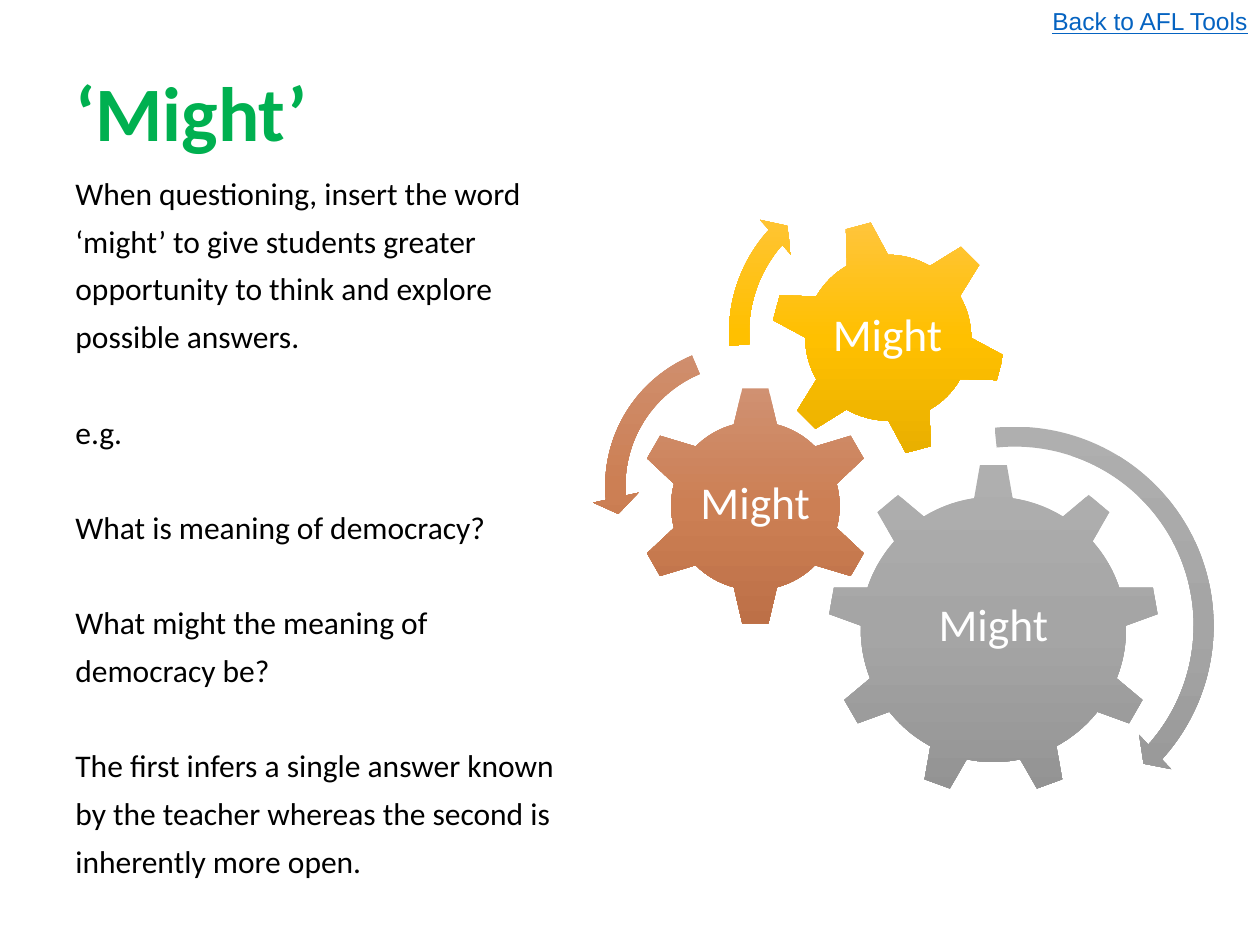
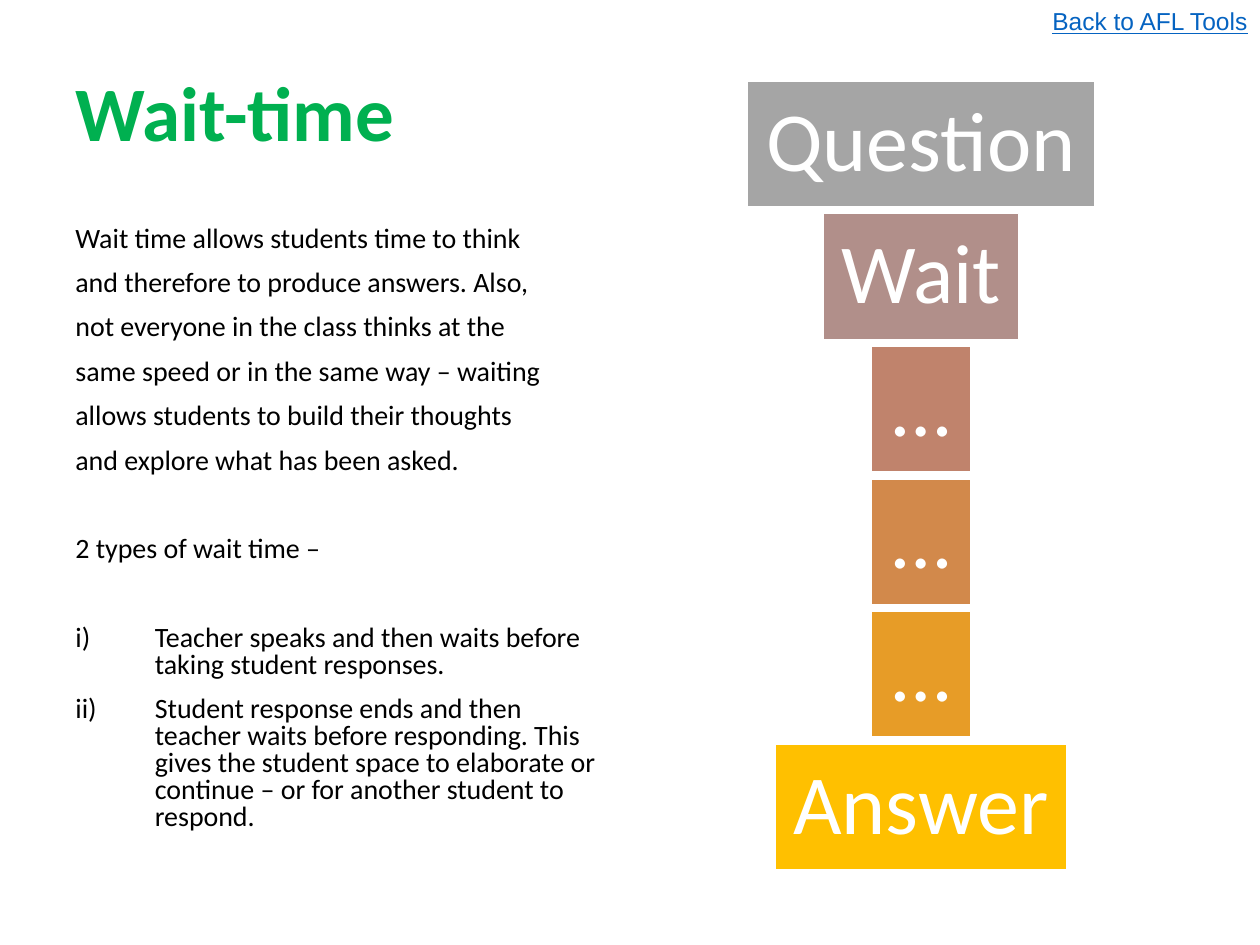
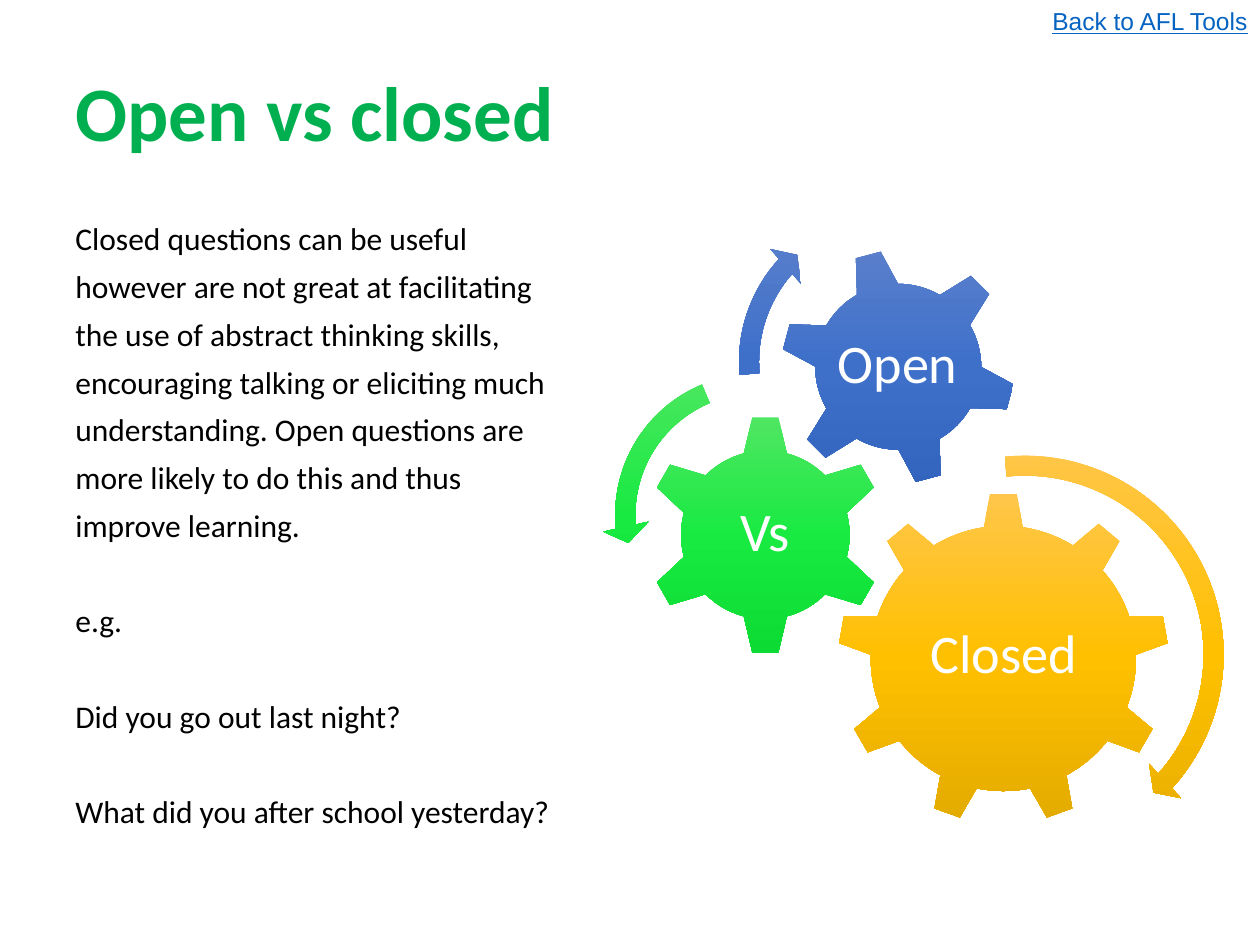
from copy import deepcopy

from lxml import etree
from pptx import Presentation
from pptx.dml.color import RGBColor
from pptx.enum import shapes, text
from pptx.oxml.ns import qn
from pptx.util import Pt

COLORS = {"title": "00B050", "body": "000000", "link": "0563C1", "white": "FFFFFF"}
GRADIENTS = {
    "grey": ["AFAFAF", "A5A5A5", "939393"],
    "copper": ["D09172", "CC7F54", "BD7047"],
    "gold": ["FFC64B", "FFC000", "E3AB00"],
    "green": ["51E663", "19EA42", "0CDB34"],
    "blue": ["6183CB", "3E70CA", "3062BB"],
}
SHAPE = shapes.MSO_SHAPE
ALIGN = text.PP_ALIGN

# Each gear: preset, left, top, size, rotation, then its label box
GEARS = [
    (SHAPE.GEAR_9, 473, 265, 189.4, 0, (511.2, 309.6, 113, 97.2)),
    (SHAPE.GEAR_6, 362.9, 220.3, 137.5, 0, (397.4, 254.9, 68.4, 67.7)),
    (SHAPE.GEAR_6, 439.9, 125.3, 135.4, 345, (469.4, 154.8, 75.6, 75.6)),
]
# Each arrow: preset, left, top, size, adjustments
ARROWS = [
    (SHAPE.CIRCULAR_ARROW, 458.6, 236.2, 242.6, (0.047, 2.99, 25.204, 158.521, 0.055)),
    (SHAPE.LEFT_CIRCULAR_ARROW, 338.4, 189.4, 176.4, (0.065, 4.3, 104.891, 148.378, 0.075)),
    (SHAPE.CIRCULAR_ARROW, 409, 95.2, 190, (0.06, 3.941, 133.138, 105.082, 0.07)),
]

# Every body is a list of blocks, parted by a gap of one line
SLIDES = [
    {
        "title": "‘Might’", "body_box": (36, 100, 318.2, 408.2), "size": 18, "gap": 27.2,
        "blocks": [
            ["When questioning, insert the word", "‘might’ to give students greater",
             "opportunity to think and explore", "possible answers."],
            ["e.g."],
            ["What is meaning of democracy?"],
            ["What might the meaning of", "democracy be?"],
            ["The first infers a single answer known", "by the teacher whereas the second is",
             "inherently more open."],
        ],
        "gears": [("Might", "grey"), ("Might", "copper"), ("Might", "gold")],
        "gear_size": 26, "shift": (0, 0),
    },
    {
        "title": "Wait-time", "body_box": (36, 126, 318.2, 356.4), "size": 16, "gap": 25.3,
        "blocks": [
            ["Wait time allows students time to think", "and therefore to produce answers. Also,",
             "not everyone in the class thinks at the", "same speed or in the same way – waiting",
             "allows students to build their thoughts", "and explore what has been asked."],
            ["2 types of wait time –"],
        ],
        "numbered": [
            "Teacher speaks and then waits before taking student responses.",
            "Student response ends and then teacher waits before responding. This gives the "
            "student space to elaborate or continue – or for another student to respond.",
        ],
        "steps": [("Question", 198.7, "A5A5A5"), ("Wait", 111.6, "B18F8A"),
                  ("…", 56.9, "C0836C"), ("…", 56.9, "D2894B"),
                  ("…", 56.9, "E79C27"), ("Answer", 166.3, "FFC000")],
    },
    {
        "title": "Open vs closed", "body_box": (36, 126, 318.2, 356.4), "size": 18, "gap": 27.2,
        "blocks": [
            ["Closed questions can be useful", "however are not great at facilitating",
             "the use of abstract thinking skills,", "encouraging talking or eliciting much",
             "understanding. Open questions are", "more likely to do this and thus",
             "improve learning."],
            ["e.g."],
            ["Did you go out last night?"],
            ["What did you after school yesterday?"],
        ],
        "gears": [("Closed", "gold"), ("Vs", "green"), ("Open", "blue")],
        "gear_size": 31, "shift": (5.7, 16.6),
    },
]


def write(paragraph, words, size, color, align=ALIGN.LEFT, spacing=0.9, font="Calibri"):
    paragraph.alignment = align
    paragraph.line_spacing = spacing
    run = paragraph.add_run()
    run.text = words
    run.font.name = font
    run.font.size = Pt(size)
    run.font.color.rgb = RGBColor.from_string(COLORS[color])
    return run


def add_gradient_shape(slide, preset, left, top, size, stops):
    """Add a square, unlined shape with a three-stop gradient that stays upright when turned."""
    shape = slide.shapes.add_shape(preset, Pt(left), Pt(top), Pt(size), Pt(size))
    shape.shadow.inherit = False
    shape.line.fill.background()
    shape.fill.gradient()
    shape.fill.gradient_angle = 270
    properties = shape.element.spPr
    properties.find(qn("a:gradFill")).set("rotWithShape", "0")
    stop_list = properties.find(".//" + qn("a:gsLst"))
    stop_list.insert(1, deepcopy(stop_list[0]))
    for stop, position, color in zip(shape.fill.gradient_stops, (0, 0.5, 1), stops):
        stop.position = position
        stop.color.rgb = RGBColor.from_string(color)
    return shape


prs = Presentation()
prs.slide_width, prs.slide_height = Pt(720), Pt(540)

for content in SLIDES:
    slide = prs.slides.add_slide(prs.slide_layouts[5])

    title = slide.shapes.title
    title.left, title.top, title.width, title.height = Pt(36), Pt(21.6), Pt(648), Pt(90)
    title.text_frame.vertical_anchor = text.MSO_ANCHOR.MIDDLE
    write(title.text_frame.paragraphs[0], content["title"], 44, "title").font.bold = True

    body = slide.shapes.add_textbox(*map(Pt, content["body_box"])).text_frame
    body.word_wrap = True
    lines = [(line, index == 0 and number > 0, False)
             for number, block in enumerate(content["blocks"])
             for index, line in enumerate(block)]
    lines += [(line, index == 0, True) for index, line in enumerate(content.get("numbered", []))]
    for index, (line, after_gap, numbered) in enumerate(lines):
        paragraph = body.add_paragraph() if index else body.paragraphs[0]
        write(paragraph, line, content["size"], "body", spacing=0.8)
        paragraph.space_before = Pt(10 + content["gap"] * after_gap)
        if numbered:
            properties = paragraph._p.get_or_add_pPr()
            properties.set("marL", str(Pt(45.4)))
            properties.set("indent", str(Pt(-45.4)))
            etree.SubElement(properties, qn("a:buFont"), typeface="+mj-lt")
            etree.SubElement(properties, qn("a:buAutoNum"), type="romanLcParenR")

    back = slide.shapes.add_textbox(Pt(573.8), Pt(0), Pt(146.2), Pt(24.5)).text_frame
    back.word_wrap = True
    write(back.paragraphs[0], "Back to AFL Tools", 14, "link", ALIGN.RIGHT, 1,
          "Arial").font.underline = True

    if "gears" in content:
        dx, dy = content["shift"]
        for (label, color), gear_rule in zip(content["gears"], GEARS):
            preset, left, top, size, rotation, (label_left, label_top, width, height) = gear_rule
            gear = add_gradient_shape(slide, preset, left + dx, top + dy, size, GRADIENTS[color])
            gear.rotation = rotation
            caption = slide.shapes.add_textbox(
                Pt(label_left + dx), Pt(label_top + dy), Pt(width), Pt(height)).text_frame
            caption.word_wrap = True
            caption.margin_left = caption.margin_right = Pt(2)
            caption.vertical_anchor = text.MSO_ANCHOR.MIDDLE
            write(caption.paragraphs[0], label, content["gear_size"], "white", ALIGN.CENTER)
        for (_, color), (preset, left, top, size, bends) in zip(content["gears"], ARROWS):
            arrow = add_gradient_shape(slide, preset, left + dx, top + dy, size, GRADIENTS[color])
            for index, bend in enumerate(bends):
                arrow.adjustments[index] = bend

    for index, (label, width, color) in enumerate(content.get("steps", [])):
        step = slide.shapes.add_shape(
            SHAPE.RECTANGLE, Pt(526.3 - width / 2), Pt(46.2 + 75.8 * index), Pt(width), Pt(72))
        step.shadow.inherit = False
        step.fill.solid()
        step.fill.fore_color.rgb = RGBColor.from_string(color)
        step.line.color.rgb = RGBColor.from_string(COLORS["white"])
        step.line.width = Pt(1)
        step.text_frame.word_wrap = False
        step.text_frame.vertical_anchor = text.MSO_ANCHOR.MIDDLE
        write(step.text_frame.paragraphs[0], label, 48, "white", ALIGN.CENTER)

prs.save("out.pptx")
